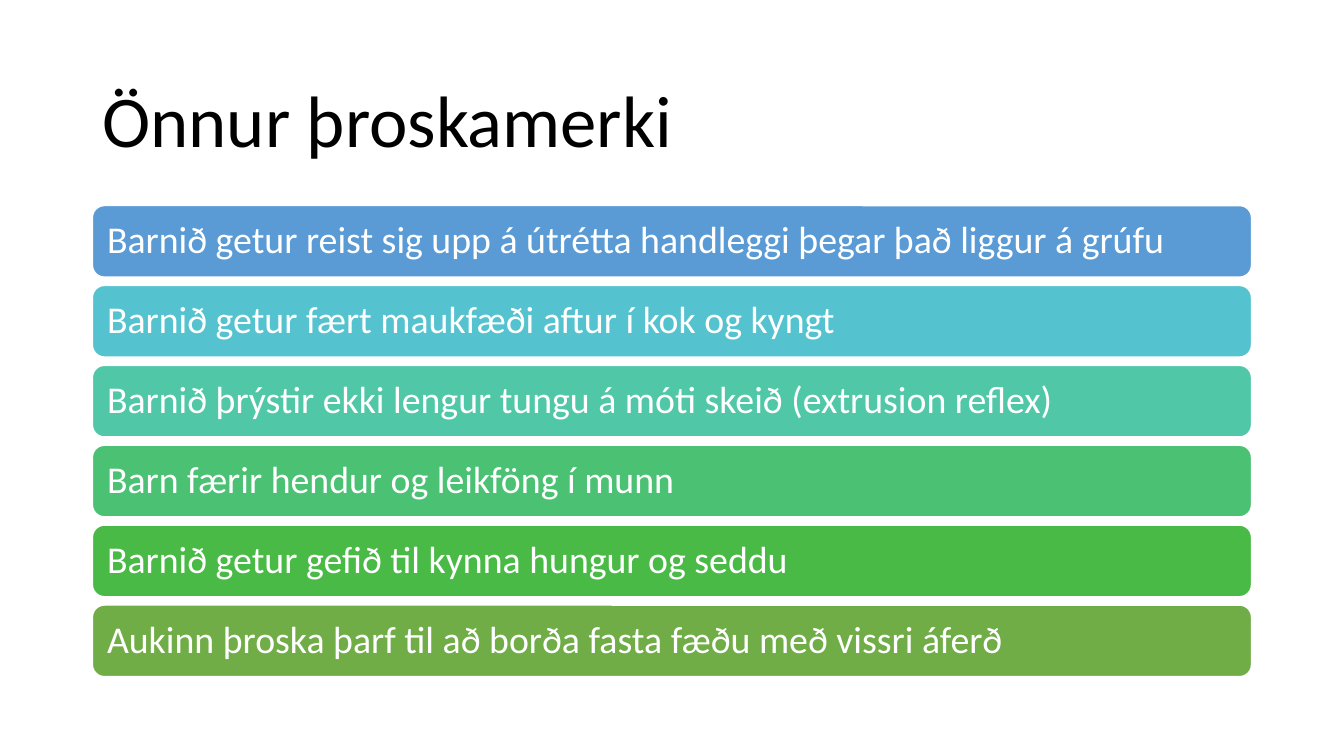
from dataclasses import dataclass

from pptx import Presentation
from pptx.dml.color import RGBColor
from pptx.enum.shapes import MSO_SHAPE
from pptx.enum.text import MSO_ANCHOR, PP_ALIGN
from pptx.util import Cm, Pt


@dataclass(frozen=True)
class Theme:
    font: str = "Calibri"
    title_size: int = 52
    bar_size: int = 27
    dark: str = "000000"
    light: str = "FFFFFF"
    bars: tuple = ("5B9BD5", "55C3CF", "50C8A7", "4BC174", "4ABA46", "70AD47")


THEME = Theme()

TITLE = "Önnur þroskamerki"
MILESTONES = (
    "Barnið getur reist sig upp á útrétta handleggi þegar það liggur á grúfu",
    "Barnið getur fært maukfæði aftur í kok og kyngt",
    "Barnið þrýstir ekki lengur tungu á móti skeið (extrusion reflex)",
    "Barn færir hendur og leikföng í munn",
    "Barnið getur gefið til kynna hungur og seddu",
    "Aukinn þroska þarf til að borða fasta fæðu með vissri áferð",
)


def write_line(sp, text, size, color, inset):
    tf = sp.text_frame
    tf.word_wrap = True
    tf.vertical_anchor = MSO_ANCHOR.MIDDLE
    tf.margin_left = tf.margin_right = inset
    p = tf.paragraphs[0]
    p.alignment = PP_ALIGN.LEFT
    p.line_spacing = 0.9
    r = p.add_run()
    r.text = text
    r.font.name = THEME.font
    r.font.size = Pt(size)
    r.font.color.rgb = RGBColor.from_string(color)


def add_title(s, left, top, width, height):
    sp = s.shapes.add_textbox(left, top, width, height)
    write_line(sp, TITLE, THEME.title_size, THEME.dark, Cm(0.25))


def add_milestones(s, left, top, width, height, gap):
    count = len(MILESTONES)
    bar_height = (height - gap * (count - 1)) // count
    for i, (text, color) in enumerate(zip(MILESTONES, THEME.bars)):
        sp = s.shapes.add_shape(
            MSO_SHAPE.ROUNDED_RECTANGLE,
            left, top + i * (bar_height + gap), width, bar_height,
        )
        sp.shadow.inherit = False
        sp.fill.solid()
        sp.fill.fore_color.rgb = RGBColor.from_string(color)
        sp.line.color.rgb = RGBColor.from_string(THEME.light)
        sp.line.width = Pt(1)
        write_line(sp, text, THEME.bar_size, THEME.light, Cm(0.28))


def main():
    prs = Presentation()
    prs.slide_width = Cm(33.87)
    prs.slide_height = Cm(19.05)
    s = prs.slides.add_slide(prs.slide_layouts[6])
    left, width = Cm(2.33), Cm(29.21)
    add_title(s, left, Cm(1.55), width, Cm(3.15))
    add_milestones(s, left, Cm(5.18), width, Cm(11.87), Cm(0.21))
    prs.save("out.pptx")


if __name__ == "__main__":
    main()
